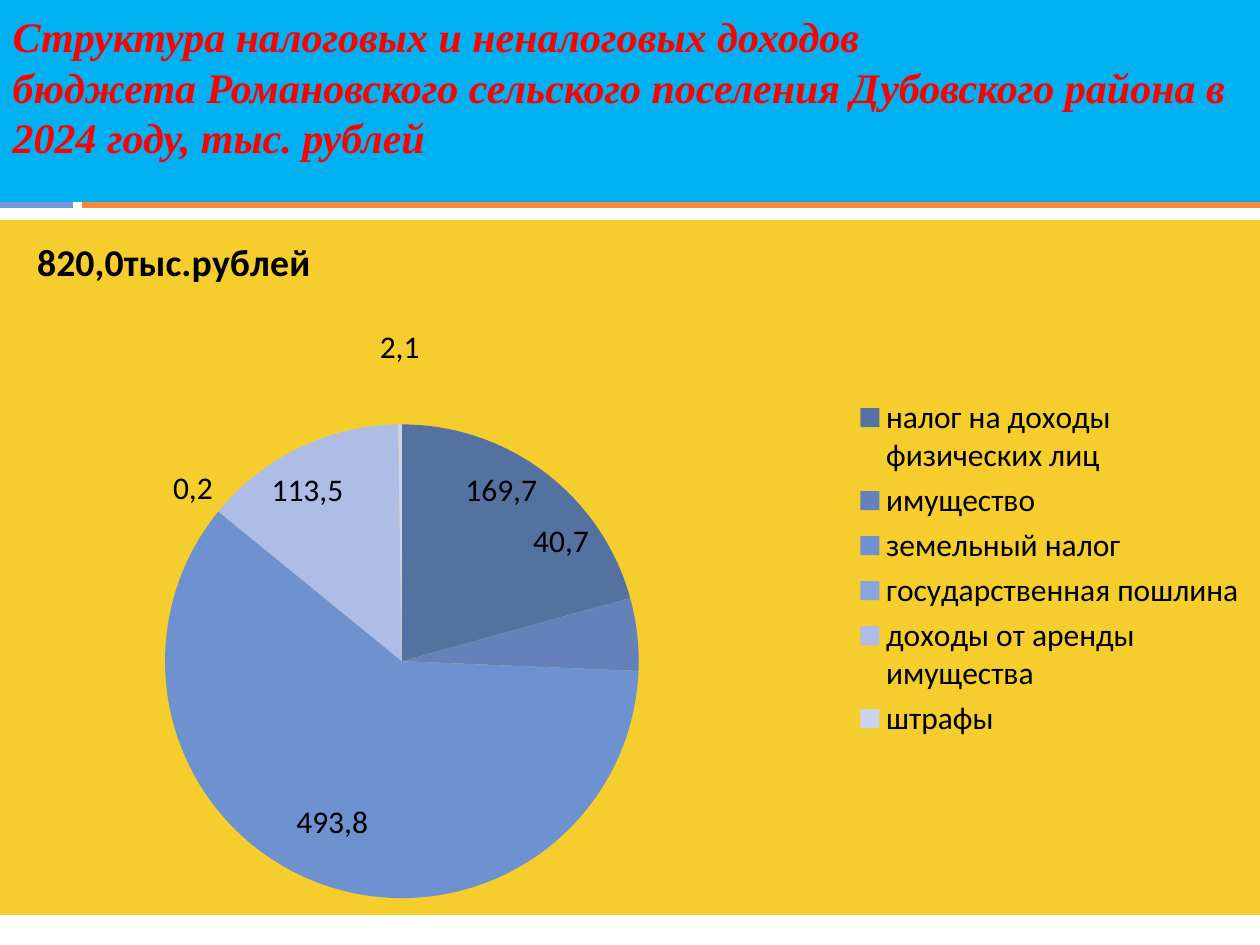
from dataclasses import dataclass
from math import cos, pi, sin

from lxml.etree import SubElement
from pptx import Presentation
from pptx.chart.data import CategoryChartData
from pptx.dml.color import RGBColor
from pptx.enum.chart import XL_CHART_TYPE as ChartType
from pptx.enum.chart import XL_LABEL_POSITION as LabelPosition
from pptx.enum.chart import XL_LEGEND_POSITION as LegendPosition
from pptx.enum.shapes import MSO_SHAPE as Shape
from pptx.enum.text import MSO_ANCHOR as Anchor
from pptx.enum.text import MSO_AUTO_SIZE as AutoSize
from pptx.enum.text import PP_ALIGN as Align
from pptx.oxml import parse_xml
from pptx.oxml.ns import nsdecls, qn
from pptx.util import Emu, Pt

EMU_PER_PX = 914400 / 126


@dataclass(frozen=True)
class Theme:
    heading_fill: str = "00B0F0"
    heading_text: str = "FF0000"
    chart_fill: str = "F5CD2D"
    text: str = "000000"
    heading_font: str = "Times New Roman"
    chart_font: str = "Calibri"
    heading_size: float = 24
    total_size: float = 21.6
    chart_size: float = 18


@dataclass(frozen=True)
class Box:
    left: int
    top: int
    width: int
    height: int

    def emu(self) -> tuple:
        return tuple(px(v) for v in (self.left, self.top, self.width, self.height))


@dataclass(frozen=True)
class Income:
    name: str
    amount: float
    color: str
    label_x: int  # centre of the label on the slide
    label_y: int


THEME = Theme()
HEADING = Box(0, -29, 1260, 231)
CHART = Box(0, 220, 1260, 695)
PIE = Box(165, 424, 474, 474)
LEGEND = Box(851, 392, 398, 353)
TOTAL = Box(30, 228, 0, 0)
STRIPES = [(Box(0, 176, 73, 32), "7598D9"), (Box(82, 176, 1178, 32), "FE8637")]
HEADING_LINES = [
    "Структура налоговых и неналоговых доходов",
    "бюджета Романовского сельского поселения Дубовского района в 2024 году, тыс. рублей",
]
INCOMES = [
    Income("налог на доходы физических лиц", 169.7, "5571A0", 502, 490),
    Income("имущество", 40.7, "6581BA", 561, 541),
    Income("земельный налог", 493.8, "6E91D0", 332, 822),
    Income("государственная пошлина", 0.2, "8AA4DC", 193, 488),
    Income("доходы от аренды имущества", 113.5, "AEBDE5", 308, 490),
    Income("штрафы", 2.1, "CAD3EC", 400, 347),
]


def px(value: int) -> Emu:
    return Emu(round(value * EMU_PER_PX))


def rgb(color: str) -> RGBColor:
    return RGBColor.from_string(color)


def style_font(font, size: float, face: str, color: str, bold=False, italic=False) -> None:
    font.size, font.name, font.bold, font.italic = Pt(size), face, bold, italic
    font.color.rgb = rgb(color)


def set_layout(owner, after: str, **values) -> None:
    """Give a chart part a manual layout, placed after the named child."""
    for old in owner.findall(qn("c:layout")):
        owner.remove(old)
    layout = parse_xml(f"<c:layout {nsdecls('c')}/>")
    manual = SubElement(layout, qn("c:manualLayout"))
    for tag, value in values.items():
        SubElement(manual, qn(f"c:{tag}")).set("val", str(value))
    previous = owner.find(qn(after)) if after else None
    if previous is None:
        owner.insert(0, layout)
    else:
        previous.addnext(layout)


def edges(box: Box) -> dict:
    """Layout values of a box as shares of the chart."""
    values = {"xMode": "edge", "yMode": "edge",
              "x": round((box.left - CHART.left) / CHART.width, 3),
              "y": round((box.top - CHART.top) / CHART.height, 3)}
    if box.width:
        values.update(w=round(box.width / CHART.width, 3),
                      h=round(box.height / CHART.height, 3))
    return values


def draw_heading(slide) -> None:
    title = slide.shapes.title
    title.left, title.top, title.width, title.height = HEADING.emu()
    title.fill.solid()
    title.fill.fore_color.rgb = rgb(THEME.heading_fill)
    frame = title.text_frame
    frame.word_wrap, frame.auto_size = True, AutoSize.NONE
    frame.vertical_anchor = Anchor.MIDDLE
    paragraph = frame.paragraphs[0]
    paragraph.alignment = Align.LEFT
    for index, line in enumerate(HEADING_LINES):
        if index:
            paragraph.add_line_break()
        run = paragraph.add_run()
        run.text = line
        style_font(run.font, THEME.heading_size, THEME.heading_font,
                   THEME.heading_text, bold=True, italic=True)


def draw_stripe(slide, box: Box, color: str) -> None:
    stripe = slide.shapes.add_shape(Shape.RECTANGLE, *box.emu())
    stripe.shadow.inherit = False
    stripe.fill.solid()
    stripe.fill.fore_color.rgb = rgb(color)
    stripe.line.fill.background()
    slide.shapes.title.element.addprevious(stripe.element)


def draw_slices(chart) -> None:
    series = chart.plots[0].series[0]
    total = sum(income.amount for income in INCOMES)
    offsets, passed = [], 0.0
    for index, income in enumerate(INCOMES):
        point = series.points[index]
        point.format.fill.solid()
        point.format.fill.fore_color.rgb = rgb(income.color)
        point.format.line.fill.background()
        label = point.data_label
        run = label.text_frame.paragraphs[0].add_run()
        run.text = f"{income.amount:.1f}".replace(".", ",")
        style_font(run.font, THEME.chart_size, THEME.chart_font, THEME.text)
        label.position = LabelPosition.CENTER

        # Shift from the middle of the slice to the wanted place
        angle = 2 * pi * (passed + income.amount / 2) / total
        passed += income.amount
        middle_x = PIE.left + PIE.width / 2 + PIE.width / 4 * sin(angle)
        middle_y = PIE.top + PIE.height / 2 - PIE.height / 4 * cos(angle)
        offsets.append(((income.label_x - middle_x) / CHART.width,
                        (income.label_y - middle_y) / CHART.height))

    # Every slice has its own label; the series shows all three parts
    labels = series.data_labels
    labels.show_value = labels.show_category_name = labels.show_series_name = True
    for label, (x, y) in zip(chart.element.iter(qn("c:dLbl")), offsets):
        set_layout(label, "c:idx", x=round(x, 3), y=round(y, 3))
    for leader in chart.element.iter(qn("c:showLeaderLines")):
        leader.set("val", "0")


def draw_chart(slide) -> None:
    data = CategoryChartData()
    data.categories = [income.name for income in INCOMES]
    data.add_series("820,0 тыс.рублей", [income.amount for income in INCOMES])
    chart = slide.shapes.add_chart(ChartType.PIE, *CHART.emu(), data).chart
    style_font(chart.font, THEME.chart_size, THEME.chart_font, THEME.text)
    chart.plots[0].vary_by_categories = True

    # Total and legend
    chart.has_title = True
    run = chart.chart_title.text_frame.paragraphs[0].add_run()
    run.text = "820,0тыс.рублей"
    style_font(run.font, THEME.total_size, THEME.chart_font, THEME.text, bold=True)
    chart.has_legend = True
    chart.legend.position = LegendPosition.RIGHT
    chart.legend.include_in_layout = False
    style_font(chart.legend.font, THEME.chart_size, THEME.chart_font, THEME.text)

    draw_slices(chart)

    # Places of the chart parts and the background
    body = chart.element.find(qn("c:chart"))
    set_layout(body.find(qn("c:title")), "c:tx", **edges(TOTAL))
    set_layout(body.find(qn("c:legend")), "c:legendPos", **edges(LEGEND))
    set_layout(body.find(qn("c:plotArea")), "", layoutTarget="inner", **edges(PIE))
    body.addnext(parse_xml(
        f"<c:spPr {nsdecls('c', 'a')}><a:solidFill><a:srgbClr val=\"{THEME.chart_fill}\"/>"
        "</a:solidFill><a:ln><a:noFill/></a:ln></c:spPr>"))


def main() -> None:
    deck = Presentation()
    deck.slide_width, deck.slide_height = px(1260), px(945)
    slide = deck.slides.add_slide(deck.slide_layouts[5])
    draw_heading(slide)
    for box, color in STRIPES:
        draw_stripe(slide, box, color)
    draw_chart(slide)
    deck.save("out.pptx")


if __name__ == "__main__":
    main()
